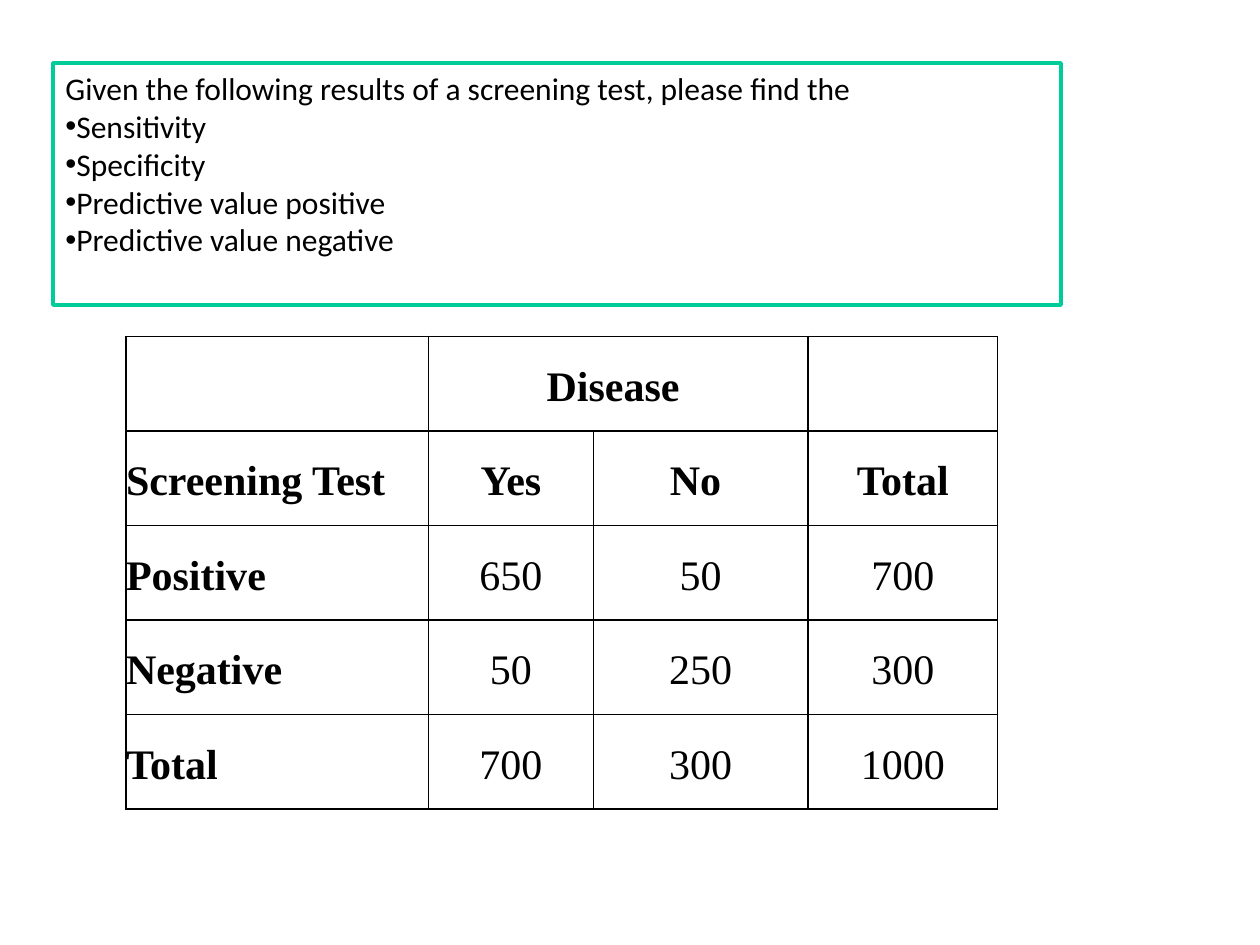
from lxml.etree import SubElement
from pptx import Presentation
from pptx.dml.color import RGBColor
from pptx.enum.shapes import MSO_SHAPE
from pptx.enum.text import MSO_ANCHOR, PP_ALIGN
from pptx.oxml.ns import qn
from pptx.util import Cm, Pt

BLACK = RGBColor(0x00, 0x00, 0x00)
WHITE = RGBColor(0xFF, 0xFF, 0xFF)
GREEN = RGBColor(0x00, 0xCC, 0x99)

QUESTION = "Given the following results of a screening test, please find the"
MEASURES = ["Sensitivity", "Specificity", "Predictive value positive", "Predictive value negative"]
RESULTS = [
    ["", "Disease ", "", ""],
    ["Screening Test", "Yes", "No ", "Total"],
    ["Positive", "650", "50", "700"],
    ["Negative", "50", "250", "300"],
    ["Total", "700", "300", "1000"],
]
HEADER_ROWS = 2
COLUMN_WIDTHS = [6.1, 3.32, 4.33, 3.82]
ROW_HEIGHT = 1.905

QUESTION_FONT = {"name": "Calibri", "size": Pt(18)}
TABLE_FONT = {"name": "Times New Roman", "size": Pt(24)}
CELL_FORMAT = {
    "vertical_anchor": MSO_ANCHOR.MIDDLE,
    "margin_left": 0, "margin_right": 0, "margin_top": 0, "margin_bottom": 0,
}


def set_attributes(target, values):
    for name, value in values.items():
        setattr(target, name, value)


def add_text(paragraph, text, font_values):
    run = paragraph.add_run()
    run.text = text
    set_attributes(run.font, font_values)
    run.font.color.rgb = BLACK


def add_bullet(paragraph):
    properties = paragraph._p.get_or_add_pPr()
    SubElement(properties, qn("a:buFont"), typeface="Arial")
    SubElement(properties, qn("a:buChar"), char="•")


def add_borders(cell):
    properties = cell._tc.get_or_add_tcPr()
    for position, side in enumerate(("a:lnL", "a:lnR", "a:lnT", "a:lnB")):
        line = SubElement(properties, qn(side), w=str(Pt(1)))
        fill = SubElement(line, qn("a:solidFill"))
        SubElement(fill, qn("a:srgbClr"), val=str(BLACK))
        properties.remove(line)
        properties.insert(position, line)


def add_results_table(slide):
    table = slide.shapes.add_table(
        len(RESULTS), len(COLUMN_WIDTHS), Cm(2.54), Cm(6.78),
        Cm(sum(COLUMN_WIDTHS)), Cm(ROW_HEIGHT * len(RESULTS)),
    ).table
    set_attributes(table, {"first_row": False, "horz_banding": False})
    for column, width in zip(table.columns, COLUMN_WIDTHS):
        column.width = Cm(width)
    for row_index, values in enumerate(RESULTS):
        table.rows[row_index].height = Cm(ROW_HEIGHT)
        for column_index, text in enumerate(values):
            cell = table.cell(row_index, column_index)
            set_attributes(cell, CELL_FORMAT)
            cell.fill.background()
            add_borders(cell)
            if text:
                paragraph = cell.text_frame.paragraphs[0]
                paragraph.alignment = PP_ALIGN.CENTER if column_index else PP_ALIGN.LEFT
                paragraph.line_spacing = 1.15
                bold = row_index < HEADER_ROWS or column_index == 0
                add_text(paragraph, text, {**TABLE_FONT, "bold": bold})
    table.cell(0, 1).merge(table.cell(0, 2))


def add_question_box(slide):
    box = slide.shapes.add_shape(MSO_SHAPE.RECTANGLE, Cm(1.07), Cm(1.27), Cm(20.32), Cm(4.88))
    box.shadow.inherit = False
    box.fill.solid()
    box.fill.fore_color.rgb = WHITE
    box.line.color.rgb = GREEN
    box.line.width = Pt(2)
    frame = box.text_frame
    set_attributes(frame, {"word_wrap": True, "vertical_anchor": MSO_ANCHOR.TOP})
    for index, text in enumerate([QUESTION, *MEASURES]):
        paragraph = frame.add_paragraph() if index else frame.paragraphs[0]
        paragraph.alignment = PP_ALIGN.LEFT
        if index:
            add_bullet(paragraph)
        add_text(paragraph, text, QUESTION_FONT)


def main():
    presentation = Presentation()
    presentation.slide_width = Cm(25.4)
    presentation.slide_height = Cm(19.05)
    slide = presentation.slides.add_slide(presentation.slide_layouts[6])
    add_results_table(slide)
    add_question_box(slide)
    presentation.save("out.pptx")


if __name__ == "__main__":
    main()
